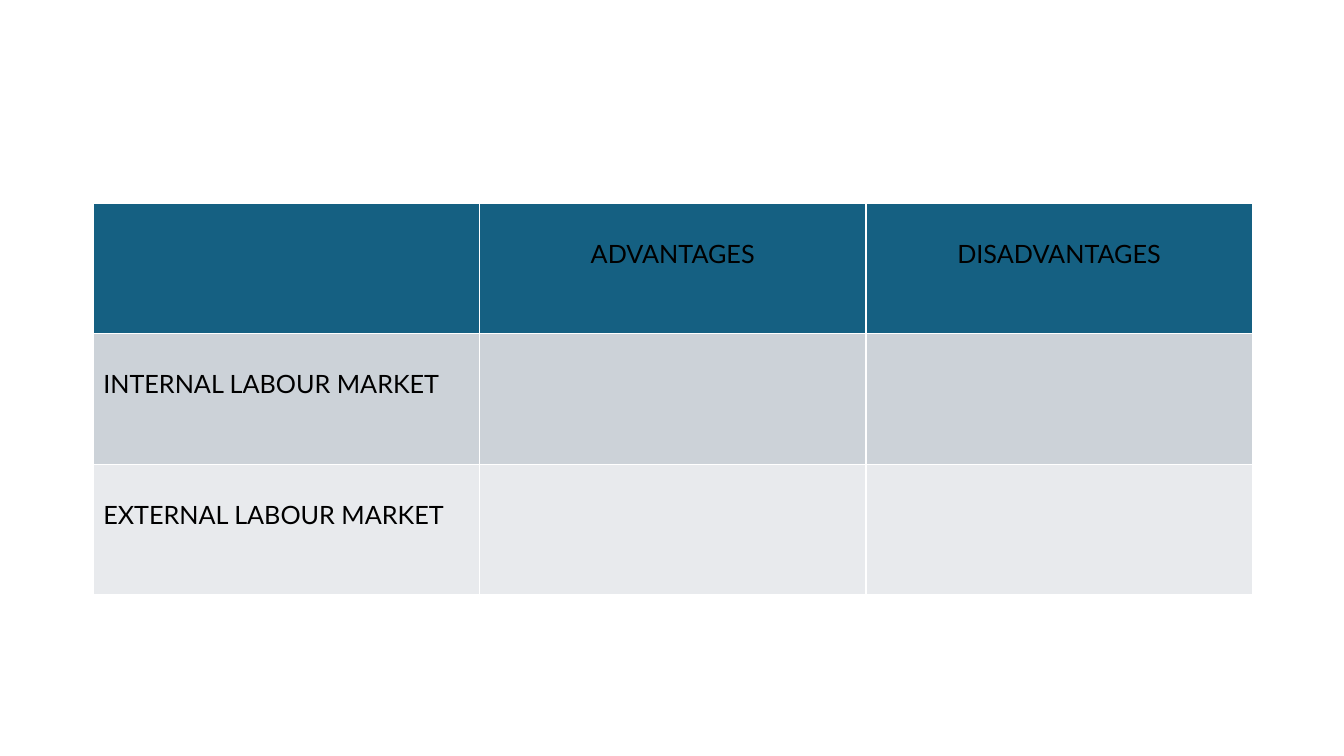
from dataclasses import dataclass

from lxml import etree
from pptx import Presentation
from pptx.dml.color import RGBColor
from pptx.enum.text import PP_ALIGN
from pptx.oxml.ns import qn
from pptx.util import Cm, Pt

CENTER = PP_ALIGN.CENTER
LEFT = PP_ALIGN.LEFT
BLANK_LAYOUT = 6


@dataclass(frozen=True)
class Theme:
    font: str = "Lato"
    text_size: int = 18
    text: str = "000000"
    border: str = "FFFFFF"
    border_width: int = 1
    row_fills: tuple = ("156082", "CCD2D8", "E8EAED")


def add_borders(cell, color, width):
    properties = cell._tc.get_or_add_tcPr()
    for side in ("lnL", "lnR", "lnT", "lnB"):
        line = etree.SubElement(properties, qn(f"a:{side}"), w=str(Pt(width)))
        fill = etree.SubElement(line, qn("a:solidFill"))
        etree.SubElement(fill, qn("a:srgbClr"), val=color)


theme = Theme()
labour_markets = [
    ["", "ADVANTAGES", "DISADVANTAGES"],
    ["INTERNAL LABOUR MARKET", "", ""],
    ["EXTERNAL LABOUR MARKET", "", ""],
]

presentation = Presentation()
presentation.slide_width = Cm(33.87)
presentation.slide_height = Cm(19.05)
slide = presentation.slides.add_slide(presentation.slide_layouts[BLANK_LAYOUT])

table = slide.shapes.add_table(
    len(labour_markets), len(labour_markets[0]), Cm(2.35), Cm(5.12), Cm(29.21), Cm(9.87)
).table
table.first_row = False
table.horz_banding = False

for row_index, row in enumerate(labour_markets):
    for column_index, text in enumerate(row):
        cell = table.cell(row_index, column_index)
        add_borders(cell, theme.border, theme.border_width)
        cell.fill.solid()
        cell.fill.fore_color.rgb = RGBColor.from_string(theme.row_fills[row_index])
        cell.margin_top = Cm(0.89)
        cell.text = text
        paragraph = cell.text_frame.paragraphs[0]
        paragraph.alignment = CENTER if row_index == 0 else LEFT
        paragraph.font.name = theme.font
        paragraph.font.size = Pt(theme.text_size)
        paragraph.font.color.rgb = RGBColor.from_string(theme.text)

presentation.save("out.pptx")
